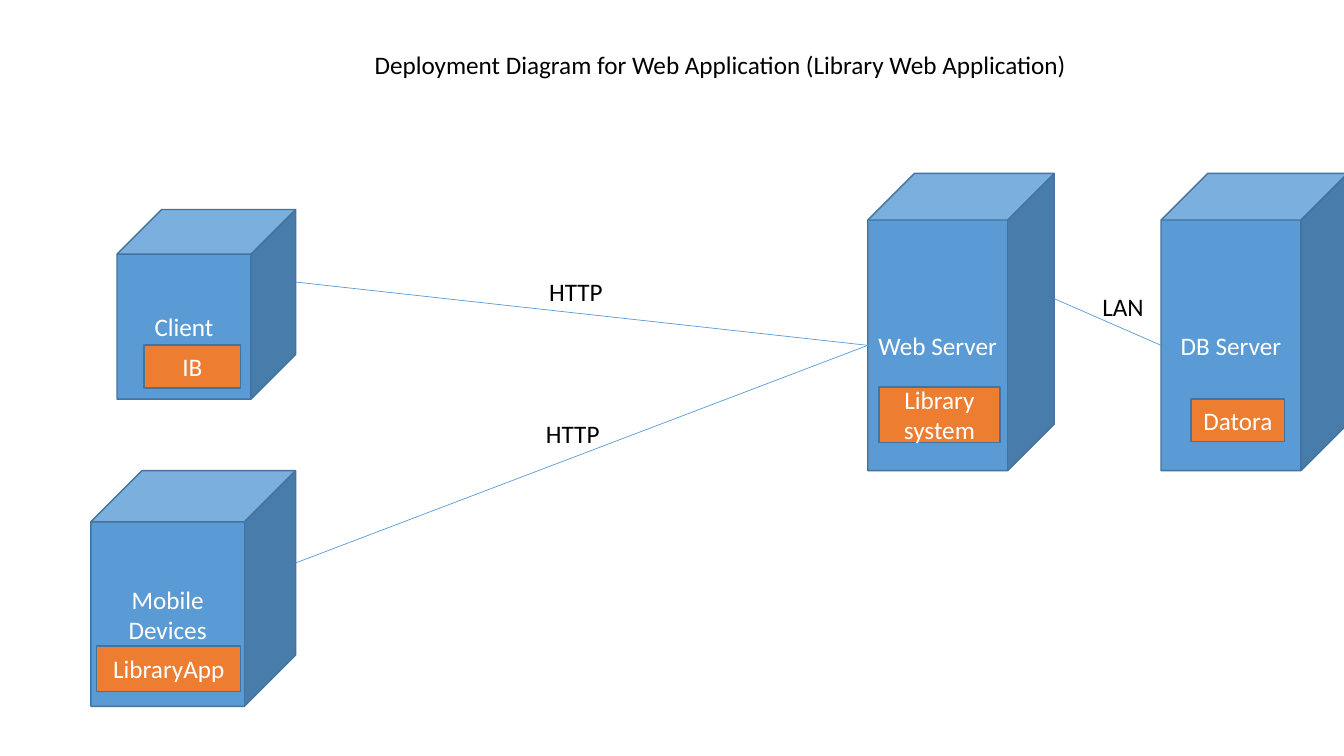
from dataclasses import dataclass

from lxml import etree
from pptx import Presentation
from pptx import util as u
from pptx.dml.color import RGBColor
from pptx.enum import shapes, text
from pptx.oxml.ns import qn

BLUE = RGBColor(0x5B, 0x9B, 0xD5)
OUTLINE = RGBColor(0x43, 0x73, 0x9E)
ORANGE = RGBColor(0xED, 0x7D, 0x31)
WHITE = RGBColor(0xFF, 0xFF, 0xFF)
BLACK = RGBColor(0x00, 0x00, 0x00)
LABEL_HEIGHT = 1.02


@dataclass(frozen=True)
class Box:
    """A captioned rectangle or cube, measured in centimetres."""
    caption: str
    left: float
    top: float
    width: float
    height: float

    @property
    def depth(self) -> float:
        """Offset of the cube's front face under the default adjustment."""
        return min(self.width, self.height) / 4

    @property
    def left_port(self) -> tuple[float, float]:
        return self.left, self.top + (self.height + self.depth) / 2

    @property
    def right_port(self) -> tuple[float, float]:
        return self.left + self.width, self.top + (self.height - self.depth) / 2


@dataclass(frozen=True)
class Link:
    source: Box
    target: Box


@dataclass(frozen=True)
class Label:
    caption: str
    left: float
    top: float
    width: float


WEB_SERVER = Box("Web Server", 21.87, 4.37, 4.7, 7.49)
DB_SERVER = Box("DB Server", 29.26, 4.37, 4.7, 7.49)
CLIENT = Box("Client", 2.95, 5.28, 4.5, 4.78)
DEVICES = Box("Mobile\nDevices", 2.29, 11.86, 5.16, 5.94)
NODES = [WEB_SERVER, DB_SERVER, CLIENT, DEVICES]

ARTIFACTS = [
    Box("Library system", 22.15, 9.75, 3.05, 1.4),
    Box("Datora", 30.02, 10.06, 2.36, 1.07),
    Box("IB", 3.63, 8.69, 2.44, 1.09),
    Box("LibraryApp", 2.44, 16.28, 3.63, 1.14),
]

LINKS = [
    Link(WEB_SERVER, DB_SERVER),
    Link(CLIENT, WEB_SERVER),
    Link(DEVICES, WEB_SERVER),
]

LABELS = [
    Label("LAN", 27.53, 7.21, 1.57),
    Label("HTTP", 13.59, 6.83, 1.88),
    Label("HTTP", 13.51, 10.41, 1.88),
    Label("Deployment Diagram for Web Application (Library Web Application)",
          9.19, 1.12, 18.16),
]


def write_text(frame, caption: str, *, color: RGBColor, align, anchor,
               wrap: bool = True) -> None:
    frame.text = caption
    frame.word_wrap = wrap
    frame.vertical_anchor = anchor
    for paragraph in frame.paragraphs:
        paragraph.alignment = align
        for run in paragraph.runs:
            run.font.name = "Calibri"
            run.font.size = u.Pt(18)
            run.font.color.rgb = color


def draw_box(slide, box: Box, preset, fill: RGBColor) -> None:
    shape = slide.shapes.add_shape(
        preset, u.Cm(box.left), u.Cm(box.top), u.Cm(box.width), u.Cm(box.height))
    shape.shadow.inherit = False
    shape.fill.solid()
    shape.fill.fore_color.rgb = fill
    shape.line.color.rgb = OUTLINE
    shape.line.width = u.Pt(1)
    write_text(shape.text_frame, box.caption, color=WHITE,
               align=text.PP_ALIGN.CENTER, anchor=text.MSO_ANCHOR.MIDDLE)


def draw_link(slide, link: Link) -> None:
    ends = [u.Cm(n) for n in (*link.source.right_port, *link.target.left_port)]
    connector = slide.shapes.add_connector(shapes.MSO_CONNECTOR.STRAIGHT, *ends)
    connector.line.color.rgb = BLUE
    connector.line.width = u.Pt(0.5)
    etree.SubElement(connector._element.spPr, qn("a:effectLst"))


def draw_label(slide, label: Label) -> None:
    box = slide.shapes.add_textbox(
        u.Cm(label.left), u.Cm(label.top), u.Cm(label.width), u.Cm(LABEL_HEIGHT))
    write_text(box.text_frame, label.caption, color=BLACK,
               align=text.PP_ALIGN.LEFT, anchor=text.MSO_ANCHOR.TOP, wrap=False)
    box.text_frame.auto_size = text.MSO_AUTO_SIZE.SHAPE_TO_FIT_TEXT


def main() -> None:
    deck = Presentation()
    deck.slide_width, deck.slide_height = u.Cm(33.87), u.Cm(19.05)
    slide = deck.slides.add_slide(deck.slide_layouts[6])

    for node in NODES:
        draw_box(slide, node, shapes.MSO_SHAPE.CUBE, BLUE)
    for link in LINKS:
        draw_link(slide, link)
    for artifact in ARTIFACTS:
        draw_box(slide, artifact, shapes.MSO_SHAPE.RECTANGLE, ORANGE)
    for label in LABELS:
        draw_label(slide, label)

    deck.save("out.pptx")


if __name__ == "__main__":
    main()
